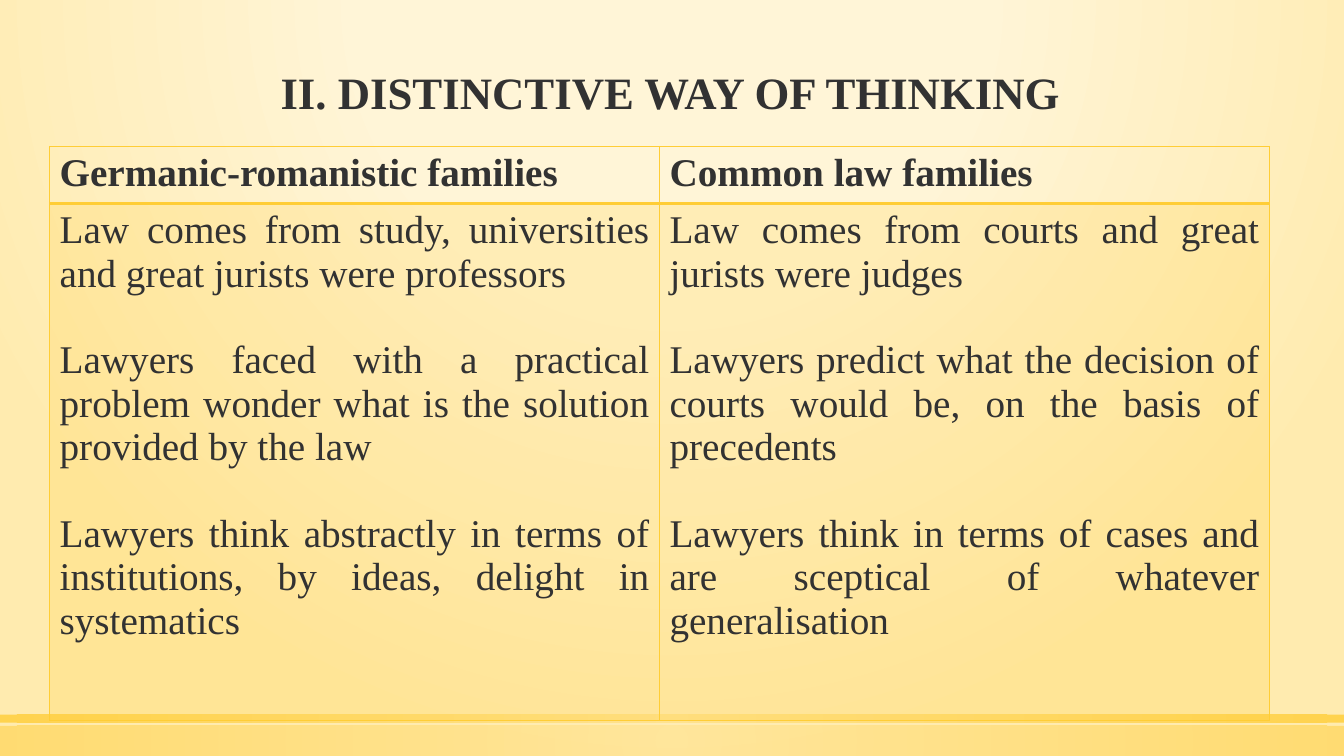
import pptx
import pptx.util
import pptx.dml.color
import pptx.enum.shapes
import pptx.enum.text
import pptx.oxml
import pptx.oxml.ns
import lxml.etree

Cm = pptx.util.Cm
Pt = pptx.util.Pt
RGBColor = pptx.dml.color.RGBColor
PP_ALIGN = pptx.enum.text.PP_ALIGN
qn = pptx.oxml.ns.qn

FONT = "Times New Roman"
INK = RGBColor(0x32, 0x32, 0x32)
GOLD = RGBColor(0xFF, 0xCD, 0x36)
LIGHT_GOLD = RGBColor(0xFF, 0xE1, 0x86)
CREAM = RGBColor(0xFF, 0xF5, 0xD7)
SAND = RGBColor(0xFF, 0xEB, 0xAF)


def set_radial_gradient(parent, stops, top, bottom):
    """Replace the gradient in parent; stops are (position, colour, opacity) in percent."""
    stop_xml = "".join(
        f'<a:gs pos="{position * 1000}"><a:srgbClr val="{color}">'
        f'<a:alpha val="{opacity * 1000}"/></a:srgbClr></a:gs>'
        for position, color, opacity in stops)
    gradient = pptx.oxml.parse_xml(
        f'<a:gradFill {pptx.oxml.ns.nsdecls("a")} rotWithShape="1"><a:gsLst>{stop_xml}</a:gsLst>'
        f'<a:path path="circle"><a:fillToRect l="50000" t="{top * 1000}" r="50000" '
        f'b="{bottom * 1000}"/></a:path></a:gradFill>')
    old = parent.find(qn("a:gradFill"))
    parent.replace(old, gradient)


def add_text(paragraph, text, size, bold, alignment):
    paragraph.alignment = alignment
    run = paragraph.add_run()
    run.text = text
    run.font.name = FONT
    run.font.size = Pt(size)
    run.font.bold = bold
    run.font.color.rgb = INK


presentation = pptx.Presentation()
presentation.slide_width = Cm(33.87)
presentation.slide_height = Cm(19.05)
slide = presentation.slides.add_slide(presentation.slide_layouts[6])

# Background
slide.background.fill.gradient()
background = next(slide.element.iter(qn("p:bgPr")))
set_radial_gradient(background, [(0, CREAM, 59), (40, CREAM, 66), (100, SAND, 100)], -80, 180)

# Bottom bars
for top, height, opacity in [(18.29, 0.76, 50), (18.01, 0.2, 80)]:
    bar = slide.shapes.add_shape(pptx.enum.shapes.MSO_SHAPE.RECTANGLE,
                                 0, Cm(top), presentation.slide_width, Cm(height))
    bar.shadow.inherit = False
    bar.line.fill.background()
    bar.fill.gradient()
    set_radial_gradient(bar.element.spPr, [(0, LIGHT_GOLD, opacity), (100, GOLD, opacity)], 50, 50)

# Title
title = slide.shapes.add_textbox(Cm(1.25), Cm(1.3), Cm(31.29), Cm(1.83))
title.text_frame.word_wrap = True
title.text_frame.vertical_anchor = pptx.enum.text.MSO_ANCHOR.BOTTOM
title_paragraph = title.text_frame.paragraphs[0]
title_paragraph.line_spacing = 0.9
add_text(title_paragraph, "II. DISTINCTIVE WAY OF THINKING", 32, True, PP_ALIGN.CENTER)

# Comparison table: heading and statements for each column
families = [
    ("Germanic-romanistic families", [
        "Law comes from study, universities and great jurists were professors",
        "Lawyers faced with a practical problem wonder what is the solution provided by the law",
        "Lawyers think abstractly in terms of institutions, by ideas, delight in systematics",
    ]),
    ("Common law families", [
        "Law comes from courts and great jurists were judges",
        "Lawyers predict what the decision of courts would be, on the basis of precedents",
        "Lawyers think in terms of cases and are sceptical of whatever generalisation",
    ]),
]
table = slide.shapes.add_table(2, 2, Cm(1.25), Cm(3.69), Cm(30.74), Cm(14.43)).table
table.first_row = False
table.horz_banding = False
table.rows[0].height = Cm(1.4)
table.rows[1].height = Cm(13.03)

for column, (heading, statements) in enumerate(families):
    table.columns[column].width = Cm(15.37)
    header_cell = table.cell(0, column)
    add_text(header_cell.text_frame.paragraphs[0], heading, 28, True, PP_ALIGN.LEFT)
    header_cell.fill.background()

    body_cell = table.cell(1, column)
    for index, statement in enumerate(statements):
        frame = body_cell.text_frame
        paragraph = frame.add_paragraph() if index else frame.paragraphs[0]
        if index:
            paragraph.space_before = Pt(31)
        add_text(paragraph, statement, 28, False, PP_ALIGN.JUSTIFY)
    body_cell.fill.solid()
    body_cell.fill.fore_color.rgb = GOLD
    fill_color = next(body_cell._tc.tcPr.iter(qn("a:srgbClr")))
    lxml.etree.SubElement(fill_color, qn("a:alpha"), val="20000")

    # Borders: the rule under the heading is twice as thick
    for cell, thick_side in [(header_cell, "lnB"), (body_cell, "lnT")]:
        for position, side in enumerate(["lnL", "lnR", "lnT", "lnB"]):
            width = Pt(2 if side == thick_side else 1)
            cell._tc.tcPr.insert(position, pptx.oxml.parse_xml(
                f'<a:{side} {pptx.oxml.ns.nsdecls("a")} w="{width}"><a:solidFill>'
                f'<a:srgbClr val="{GOLD}"/></a:solidFill></a:{side}>'))

presentation.save("out.pptx")
